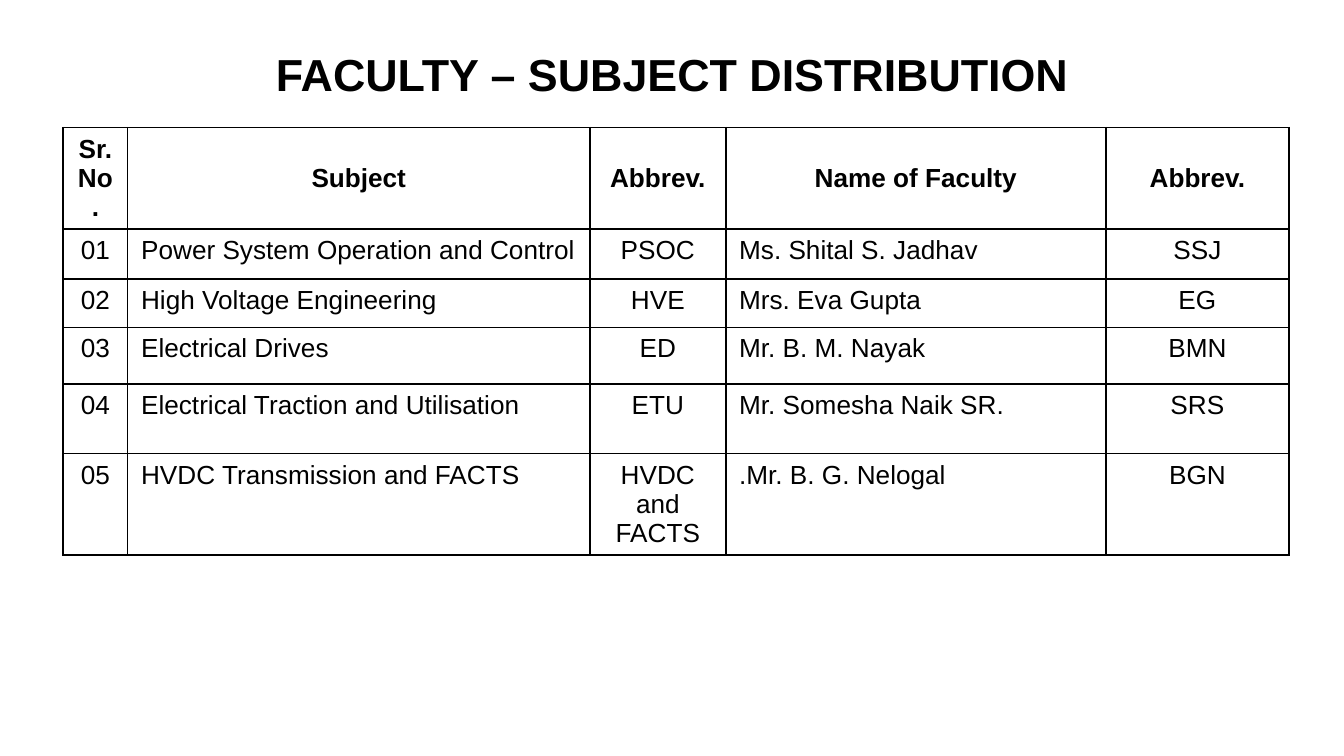
"""Build the faculty and subject distribution slide."""
import pptx
import pptx.dml.color
import pptx.enum.text
import pptx.oxml
import pptx.oxml.ns
import pptx.util

Inches = pptx.util.Inches
Pt = pptx.util.Pt
ALIGN = pptx.enum.text.PP_ALIGN
ANCHOR = pptx.enum.text.MSO_ANCHOR
BLACK = pptx.dml.color.RGBColor(0, 0, 0)
WHITE = pptx.dml.color.RGBColor(255, 255, 255)


def style(par, size, bold, align):
    par.alignment = align
    for run in par.runs:
        run.font.name = "Arial"
        run.font.size = Pt(size)
        run.font.bold = bold
        run.font.color.rgb = BLACK


def border(cell, side):
    cell._tc.get_or_add_tcPr().append(pptx.oxml.parse_xml(
        f'<a:{side} {pptx.oxml.ns.nsdecls("a")} w="{Pt(1)}">'
        f'<a:solidFill><a:srgbClr val="{BLACK}"/></a:solidFill></a:{side}>'))


deck = pptx.Presentation()
deck.slide_width = Inches(10)
deck.slide_height = Inches(10) * 9 // 16
slide = deck.slides.add_slide(deck.slide_layouts[5])

title = slide.shapes.title
title.left, title.top = Inches(0), Inches(0.25)
title.width, title.height = Inches(10), Inches(0.73)
frame = title.text_frame
frame.text = "FACULTY – SUBJECT DISTRIBUTION"
frame.vertical_anchor = ANCHOR.TOP
frame.auto_size = pptx.enum.text.MSO_AUTO_SIZE.NONE
frame.margin_left = frame.margin_right = Inches(0.1)
frame.margin_top = frame.margin_bottom = Inches(0.1)
style(frame.paragraphs[0], 24, True, ALIGN.CENTER)

rows = [
    ("Sr. No.", "Subject", "Abbrev.", "Name of Faculty", "Abbrev."),
    ("01", "Power System Operation and Control", "PSOC", "Ms. Shital S. Jadhav", "SSJ"),
    ("02", "High Voltage Engineering", "HVE", "Mrs. Eva Gupta", "EG"),
    ("03", "Electrical Drives", "ED", "Mr. B. M. Nayak", "BMN"),
    ("04", "Electrical Traction and Utilisation", "ETU", "Mr. Somesha Naik SR.", "SRS"),
    ("05", "HVDC Transmission and FACTS", "HVDC and FACTS", ".Mr. B. G. Nelogal", "BGN"),
]
widths = [0.48, 3.44, 1.01, 2.83, 1.36]
heights = [0.71, 0.37, 0.36, 0.42, 0.52, 0.47]

table = slide.shapes.add_table(
    len(rows), len(widths), Inches(0.47), Inches(0.95),
    Inches(sum(widths)), Inches(sum(heights))).table
for col, width in zip(table.columns, widths):
    col.width = Inches(width)
for row, height in zip(table.rows, heights):
    row.height = Inches(height)

for r, row in enumerate(rows):
    for c, text in enumerate(row):
        cell = table.cell(r, c)
        head = r == 0
        cell.text_frame.text = text
        cell.vertical_anchor = ANCHOR.MIDDLE if head else ANCHOR.TOP
        left = not head and c in (1, 3)
        style(cell.text_frame.paragraphs[0], 14, head, ALIGN.LEFT if left else ALIGN.CENTER)
        for side in ("lnL", "lnR", "lnT", "lnB"):
            border(cell, side)
        cell.fill.solid()
        cell.fill.fore_color.rgb = WHITE

deck.save("out.pptx")
